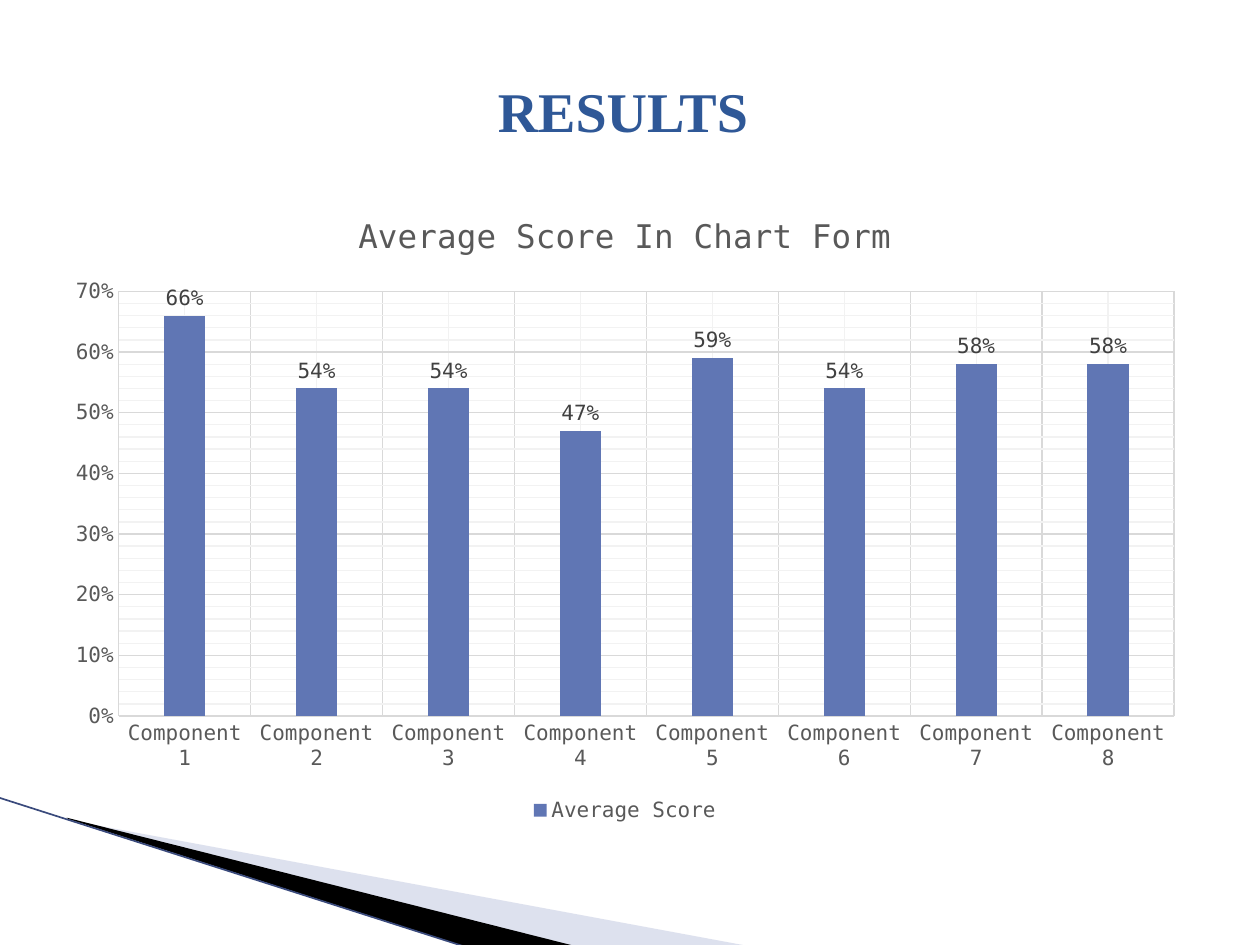
"""Build the Results slide with a column chart of average component scores."""
from lxml.etree import SubElement
from pptx import Presentation
from pptx.chart.data import CategoryChartData
from pptx.dml.color import RGBColor
from pptx.enum.chart import XL_CHART_TYPE as ChartType, XL_LABEL_POSITION as LabelPosition
from pptx.enum.chart import XL_LEGEND_POSITION as LegendPosition, XL_TICK_MARK as TickMark
from pptx.enum.shapes import MSO_CONNECTOR as Connector
from pptx.enum.text import MSO_ANCHOR as Anchor, PP_ALIGN as Align
from pptx.oxml.ns import qn
from pptx.util import Inches, Pt

TITLE_BLUE = RGBColor(0x2F, 0x58, 0x97)
BAR_BLUE = RGBColor(0x60, 0x76, 0xB4)
PALE_BLUE = RGBColor(0xAC, 0xB4, 0xD5)
EDGE_BLUE = RGBColor(0x3A, 0x4A, 0x7C)
BLACK = RGBColor(0, 0, 0)
TEXT_GRAY = RGBColor(0x59, 0x59, 0x59)
LABEL_GRAY = RGBColor(0x40, 0x40, 0x40)
GRID_GRAY = RGBColor(0xD9, 0xD9, 0xD9)
MINOR_GRAY = RGBColor(0xF2, 0xF2, 0xF2)
MONO = "DejaVu Sans Mono"

TITLE = "RESULTS "
CHART_TITLE = "Average Score In Chart Form"
SERIES_NAME = "Average Score"
SCORES = [0.66, 0.54, 0.54, 0.47, 0.59, 0.54, 0.58, 0.58]
WEDGES = [
    (PALE_BLUE, 40, [(0.55, 6.51), (5.95, 7.51), (4.56, 7.51), (0.55, 6.5)]),
    (BLACK, 100, [(0.53, 6.49), (4.57, 7.51), (3.72, 7.52), (0.54, 6.5)]),
]
EDGE = (-0.01, 6.33, 3.71, 7.52)
TITLE_BOX = (3, 0.25, 4, 1.25)
CHART_BOX = (0.42, 1.5, 9.08, 5.07)

TITLE_FONT = {"name": "Times New Roman", "size": Pt(32), "bold": True}
CHART_FONT = {"name": MONO, "size": Pt(12), "bold": False}
CHART_TITLE_FONT = {**CHART_FONT, "size": Pt(18.6)}
VALUE_AXIS = {"minimum_scale": 0, "maximum_scale": 0.7, "major_unit": 0.1, "minor_unit": 0.02}


def set_attributes(target, values):
    for name, value in values.items():
        setattr(target, name, value)


def format_font(font, values, color):
    set_attributes(font, values)
    font.color.rgb = color


def format_line(line, color, width=0.75):
    line.color.rgb = color
    line.width = Pt(width)


def add_wedge(slide, color, opacity, points):
    start, *rest = [(Inches(x), Inches(y)) for x, y in points]
    builder = slide.shapes.build_freeform(*start)
    builder.add_line_segments(rest, close=True)
    shape = builder.convert_to_shape()
    shape.shadow.inherit = False
    shape.fill.solid()
    shape.fill.fore_color.rgb = color
    shape.line.fill.background()
    if opacity < 100:
        color_element = shape._element.spPr.find(qn("a:solidFill"))[0]
        SubElement(color_element, qn("a:alpha")).set("val", str(opacity * 1000))


def add_edge(slide):
    edge = slide.shapes.add_connector(Connector.STRAIGHT, *map(Inches, EDGE))
    format_line(edge.line, EDGE_BLUE, 0.95)
    SubElement(edge._element.spPr, qn("a:effectLst"))


def format_title(slide):
    title = slide.shapes.title
    set_attributes(title, dict(zip(("left", "top", "width", "height"), map(Inches, TITLE_BOX))))
    title.text_frame.vertical_anchor = Anchor.MIDDLE
    paragraph = title.text_frame.paragraphs[0]
    paragraph.alignment = Align.CENTER
    run = paragraph.add_run()
    run.text = TITLE
    format_font(run.font, TITLE_FONT, TITLE_BLUE)


def format_minor_gridlines(axis):
    gridlines = axis._element.find(qn("c:minorGridlines"))
    line = SubElement(SubElement(gridlines, qn("c:spPr")), qn("a:ln"), w=str(Pt(0.75)))
    SubElement(SubElement(line, qn("a:solidFill")), qn("a:srgbClr"), val=str(MINOR_GRAY))


def format_axis(axis):
    set_attributes(axis, {"major_tick_mark": TickMark.NONE, "minor_tick_mark": TickMark.NONE,
                          "has_major_gridlines": True, "has_minor_gridlines": True})
    format_line(axis.major_gridlines.format.line, GRID_GRAY)
    format_minor_gridlines(axis)
    format_font(axis.tick_labels.font, CHART_FONT, TEXT_GRAY)


def add_score_chart(slide):
    data = CategoryChartData(number_format="0%")
    data.categories = [f"Component {number}" for number in range(1, len(SCORES) + 1)]
    data.add_series(SERIES_NAME, SCORES)
    chart = slide.shapes.add_chart(ChartType.COLUMN_CLUSTERED, *map(Inches, CHART_BOX), data).chart
    format_font(chart.font, {**CHART_FONT, "size": Pt(10)}, BLACK)

    chart.has_title = True
    chart.chart_title.include_in_layout = False
    run = chart.chart_title.text_frame.paragraphs[0].add_run()
    run.text = CHART_TITLE
    format_font(run.font, CHART_TITLE_FONT, TEXT_GRAY)

    chart.has_legend = True
    set_attributes(chart.legend, {"position": LegendPosition.BOTTOM, "include_in_layout": False})
    format_font(chart.legend.font, CHART_FONT, TEXT_GRAY)

    for axis in (chart.category_axis, chart.value_axis):
        format_axis(axis)
    format_line(chart.category_axis.format.line, GRID_GRAY)
    set_attributes(chart.value_axis, VALUE_AXIS)
    chart.value_axis.format.line.fill.background()
    set_attributes(chart.value_axis.tick_labels,
                   {"number_format": "0%", "number_format_is_linked": False})

    plot = chart.plots[0]
    set_attributes(plot, {"gap_width": 219, "overlap": -27, "vary_by_categories": False})
    series = plot.series[0]
    series.format.fill.solid()
    series.format.fill.fore_color.rgb = BAR_BLUE
    labels = series.data_labels
    set_attributes(labels, {"show_value": True, "position": LabelPosition.OUTSIDE_END,
                            "number_format": "0%", "number_format_is_linked": False})
    format_font(labels.font, CHART_FONT, LABEL_GRAY)


def main():
    presentation = Presentation()
    set_attributes(presentation, {"slide_width": Inches(10), "slide_height": Inches(7.5)})
    slide = presentation.slides.add_slide(presentation.slide_layouts[5])
    for wedge in WEDGES:
        add_wedge(slide, *wedge)
    add_edge(slide)
    format_title(slide)
    add_score_chart(slide)
    presentation.save("out.pptx")


if __name__ == "__main__":
    main()
